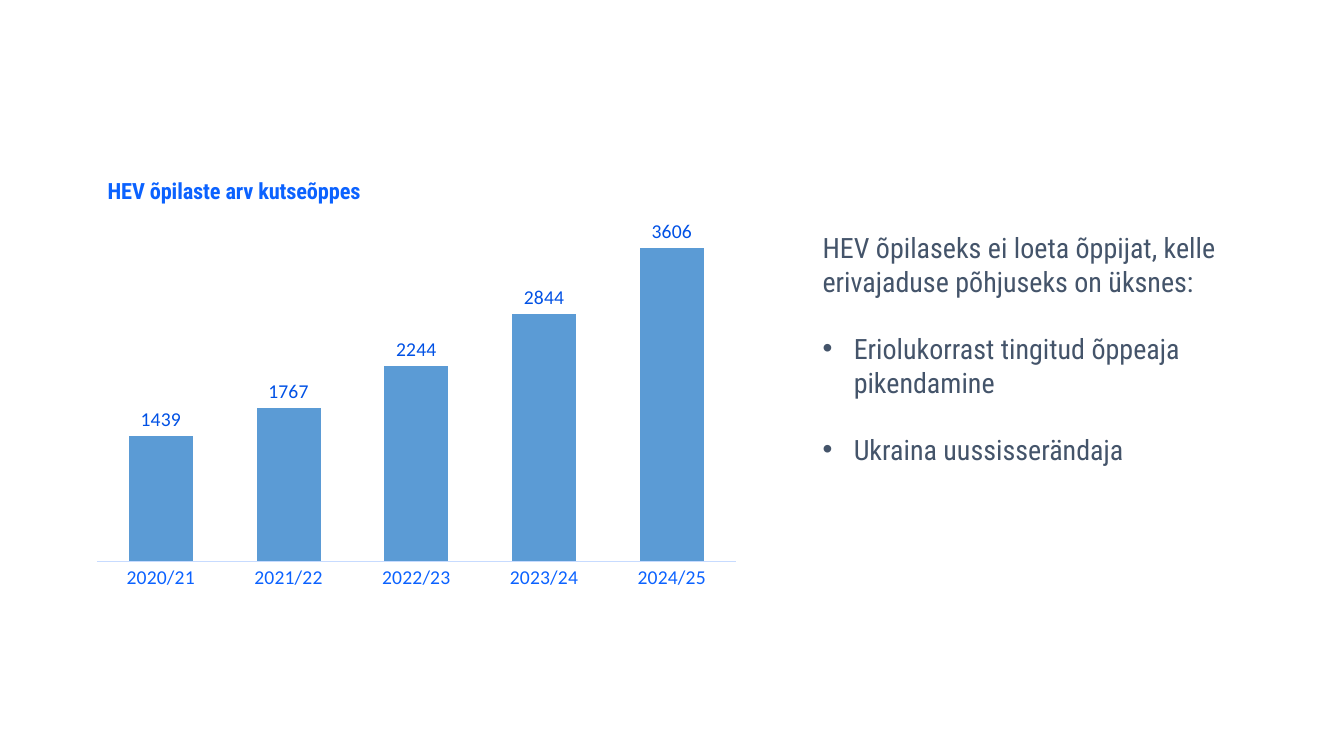
from lxml import etree
from pptx import Presentation
from pptx import util as u
from pptx.chart.data import CategoryChartData
from pptx.dml.color import RGBColor
from pptx.enum import chart as charts, text
from pptx.oxml import parse_xml
from pptx.oxml.ns import nsdecls, qn

HEADING_FONT = "Roboto Condensed"
CHART_FONT = "Calibri"
BLUE = "0B62FF"
STUDENTS = {
    "2020/21": 1439,
    "2021/22": 1767,
    "2022/23": 2244,
    "2023/24": 2844,
    "2024/25": 3606,
}
INTRO = "HEV õpilaseks ei loeta õppijat, kelle erivajaduse põhjuseks on üksnes:"
EXCEPTIONS = ["Eriolukorrast tingitud õppeaja pikendamine", "Ukraina uussisserändaja"]


def rgb(color):
    return RGBColor.from_string(color)


def style_font(font, name, size, color, bold=False):
    font.name = name
    font.size = u.Pt(size)
    font.bold = bold
    font.color.rgb = rgb(color)


def add_bullet(paragraph, indent):
    properties = paragraph._p.get_or_add_pPr()
    properties.set("marL", str(indent))
    properties.set("indent", str(-indent))
    bullet_font = etree.SubElement(properties, qn("a:buFont"))
    bullet_font.set("typeface", "Arial")
    etree.SubElement(properties, qn("a:buChar")).set("char", "•")


def place_chart_part(part, position, **fractions):
    """Give a chart part a manual layout, in fractions of the chart area."""
    for layout in part.findall(qn("c:layout")):
        part.remove(layout)
    target = '<c:layoutTarget val="inner"/>' if "w" in fractions else ""
    modes = "".join(f'<c:{key}Mode val="edge"/>' for key in "xy")
    values = "".join(f'<c:{key} val="{value}"/>' for key, value in fractions.items())
    part.insert(position, parse_xml(
        f'<c:layout {nsdecls("c")}><c:manualLayout>{target}{modes}{values}'
        "</c:manualLayout></c:layout>"))


def style_axes(chart):
    years = chart.category_axis
    years.major_tick_mark = charts.XL_TICK_MARK.NONE
    years.format.line.color.rgb = rgb("C7DBFF")
    years.format.line.width = u.Pt(0.75)
    style_font(years.tick_labels.font, CHART_FONT, 14, BLUE)
    counts = chart.value_axis
    counts.visible = False
    counts.has_major_gridlines = False
    counts.minimum_scale = 0
    counts.maximum_scale = 4000


def style_columns(plot):
    plot.gap_width = 100
    plot.overlap = -27
    plot.vary_by_categories = False
    fill = plot.series[0].format.fill
    fill.solid()
    fill.fore_color.rgb = rgb("5B9BD5")
    labels = plot.series[0].data_labels
    labels.show_value = True
    labels.position = charts.XL_LABEL_POSITION.OUTSIDE_END
    style_font(labels.font, CHART_FONT, 14, "0051E5")


def add_title(chart, title):
    paragraph = chart.chart_title.text_frame.paragraphs[0]
    run = paragraph.add_run()
    run.text = title
    style_font(run.font, HEADING_FONT, 16, BLUE, bold=True)
    place_chart_part(chart.chart_title.element, 1, x=0.03, y=0.04)


def add_student_chart(slide):
    data = CategoryChartData()
    data.categories = list(STUDENTS)
    data.add_series("Series 1", list(STUDENTS.values()))
    chart = slide.shapes.add_chart(
        charts.XL_CHART_TYPE.COLUMN_CLUSTERED, u.Inches(0.83), u.Inches(1.54),
        u.Inches(6.6), u.Inches(4.43), data).chart
    chart.has_legend = False
    style_font(chart.font, CHART_FONT, 14, "003087")
    style_axes(chart)
    style_columns(chart.plots[0])
    add_title(chart, "HEV õpilaste arv kutseõppes")
    plot_area = chart.element.find(".//" + qn("c:plotArea"))
    place_chart_part(plot_area, 0, x=0.02, y=0.13, w=0.96, h=0.78)


def add_explanation(slide):
    box = slide.shapes.add_textbox(
        u.Inches(8.06), u.Inches(2.24), u.Inches(4.44), u.Inches(2.46))
    frame = box.text_frame
    frame.word_wrap = True
    frame.auto_size = text.MSO_AUTO_SIZE.SHAPE_TO_FIT_TEXT
    for index, line in enumerate([INTRO, *EXCEPTIONS]):
        paragraph = frame.add_paragraph() if index else frame.paragraphs[0]
        if index:
            paragraph.space_before = u.Pt(24)
            add_bullet(paragraph, u.Inches(0.31))
        run = paragraph.add_run()
        run.text = line
        style_font(run.font, HEADING_FONT, 20, "44546A")


def main():
    presentation = Presentation()
    presentation.slide_width = u.Inches(13.33)
    presentation.slide_height = u.Inches(7.5)
    slide = presentation.slides.add_slide(presentation.slide_layouts[6])
    add_explanation(slide)
    add_student_chart(slide)
    presentation.save("out.pptx")


if __name__ == "__main__":
    main()
